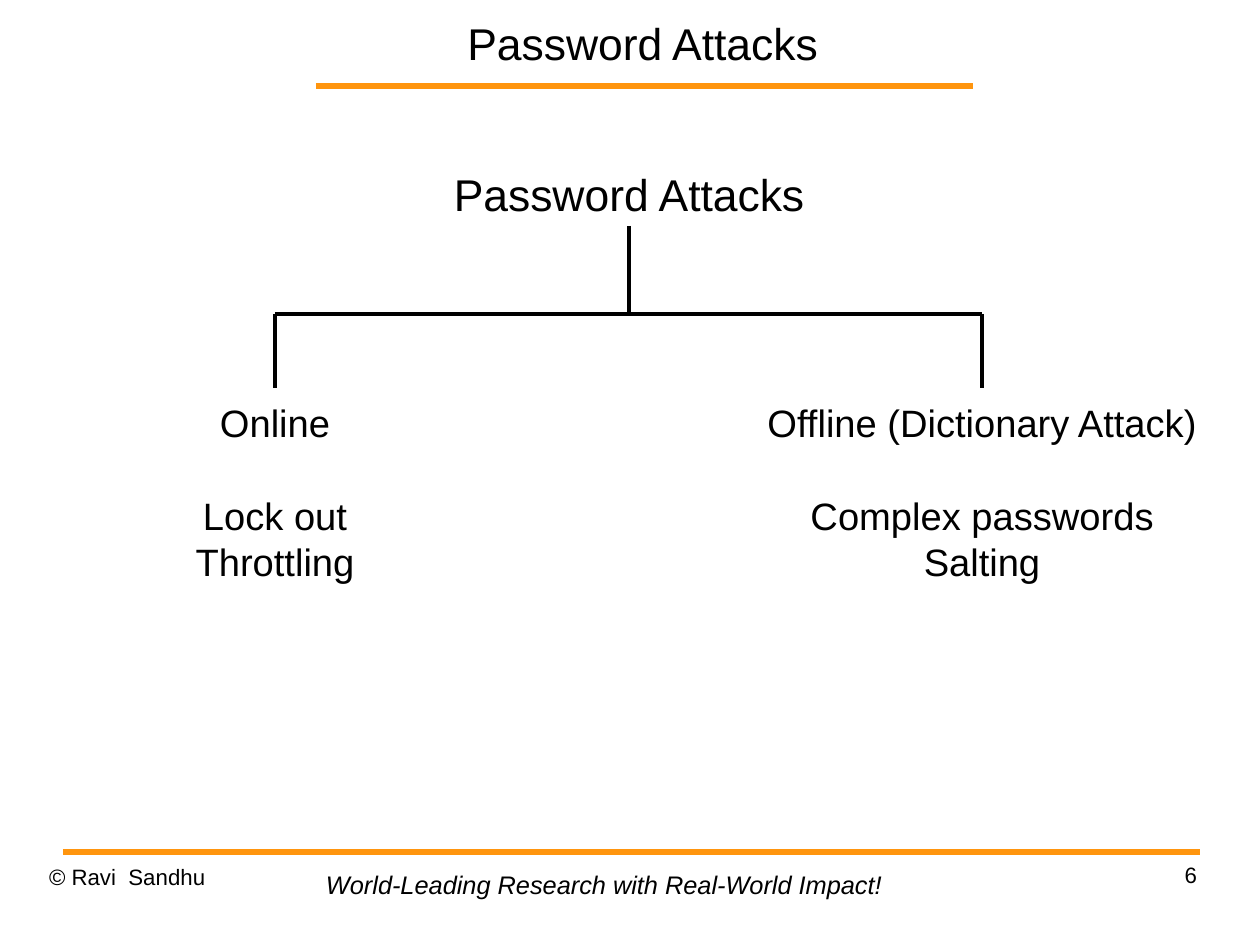
from lxml.etree import SubElement
from pptx import Presentation
from pptx.dml.color import RGBColor
from pptx.enum.shapes import MSO_CONNECTOR
from pptx.enum.text import MSO_ANCHOR, PP_ALIGN
from pptx.oxml.ns import qn
from pptx.util import Pt

EMU_PER_PX = 8000
SLIDE_SIZE = (1260, 945)
COLORS = {"text": "000000", "rule": "FF950E"}
FONT = "Arial"

TITLE = "Password Attacks"
COPYRIGHT = "© Ravi  Sandhu"
MOTTO = "World-Leading Research with Real-World Impact!"
PAGE_NUMBER = "6"
BRANCHES = [
    {"attack": "Online", "defenses": ["Lock out", "Throttling"], "center": 275, "width": 184},
    {"attack": "Offline (Dictionary Attack)", "defenses": ["Complex passwords", "Salting"],
     "center": 982, "width": 456},
]
RULES = [((316, 86), (973, 86)), ((63, 852), (1200, 852))]

ROOT_BOX = (440, 161, 378, 65)
BUS_Y = 314
DROP_END = 388
BRANCH_TOP, BRANCH_HEIGHT = 393, 197
PADDING = (11, 6)


def px(value):
    return round(value * EMU_PER_PX)


def add_text(slide, text, box, size, align=PP_ALIGN.LEFT, anchor=MSO_ANCHOR.TOP,
             italic=False, wrap=False, padding=PADDING, line_spacing=None, gap_after_first=0):
    shape = slide.shapes.add_textbox(*map(px, box))
    frame = shape.text_frame
    frame.word_wrap = wrap
    frame.vertical_anchor = anchor
    frame.margin_left = frame.margin_right = px(padding[0])
    frame.margin_top = frame.margin_bottom = px(padding[1])
    frame.text = text
    for index, paragraph in enumerate(frame.paragraphs):
        paragraph.alignment = align
        if line_spacing:
            paragraph.line_spacing = line_spacing
        if index == 1:
            paragraph.space_before = Pt(gap_after_first)
        font = paragraph.font
        font.name = FONT
        font.size = Pt(size)
        font.italic = italic
        font.color.rgb = RGBColor.from_string(COLORS["text"])
    return shape


def add_line(slide, start, end, color, width):
    line = slide.shapes.add_connector(MSO_CONNECTOR.STRAIGHT, *map(px, start + end))
    line.line.color.rgb = RGBColor.from_string(COLORS[color])
    line.line.width = Pt(width)
    SubElement(line._element.spPr, qn("a:effectLst"))
    return line


def add_frame(slide):
    for start, end in RULES:
        add_line(slide, start, end, "rule", 4.31)
    flush = {"wrap": True, "padding": (0, 0)}
    add_text(slide, COPYRIGHT, (49, 863, 294, 65), 14, line_spacing=1.01, **flush)
    add_text(slide, PAGE_NUMBER, (903, 861, 294, 65), 14, align=PP_ALIGN.RIGHT,
             line_spacing=1.01, **flush)
    add_text(slide, MOTTO, (315, 863, 581, 42), 16, italic=True)
    add_text(slide, TITLE, (275, 0, 735, 86), 28, align=PP_ALIGN.CENTER,
             anchor=MSO_ANCHOR.MIDDLE, **flush)


def add_tree(slide):
    root = add_text(slide, TITLE, ROOT_BOX, 28, align=PP_ALIGN.CENTER)
    left, top, width, height = ROOT_BOX
    root_x = left + width // 2
    trunk = add_line(slide, (root_x, top + height), (root_x, BUS_Y), "text", 2.5)
    trunk.begin_connect(root, 2)

    centers = [branch["center"] for branch in BRANCHES]
    add_line(slide, (min(centers), BUS_Y), (max(centers), BUS_Y), "text", 2)
    for branch in BRANCHES:
        center, width = branch["center"], branch["width"]
        add_line(slide, (center, BUS_Y), (center, DROP_END), "text", 2.5)
        add_text(slide, "\n".join([branch["attack"], *branch["defenses"]]),
                 (center - width // 2, BRANCH_TOP, width, BRANCH_HEIGHT), 24,
                 align=PP_ALIGN.CENTER, gap_after_first=30)


def main():
    presentation = Presentation()
    presentation.slide_width, presentation.slide_height = map(px, SLIDE_SIZE)
    slide = presentation.slides.add_slide(presentation.slide_layouts[6])
    add_frame(slide)
    add_tree(slide)
    presentation.save("out.pptx")


if __name__ == "__main__":
    main()
